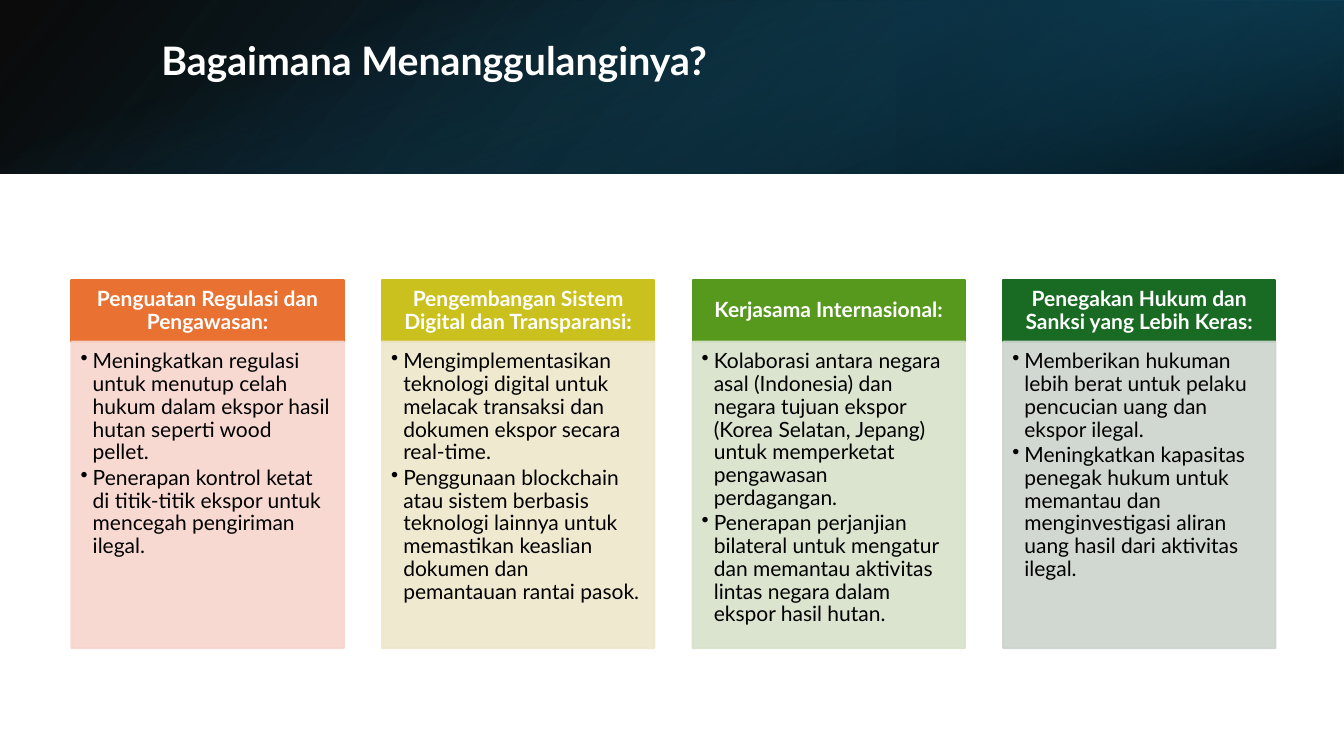
from lxml import etree
from pptx import Presentation
from pptx.dml.color import RGBColor
from pptx.enum import shapes, text
from pptx.oxml import ns
from pptx.util import Inches, Pt

WHITE = RGBColor(0xFF, 0xFF, 0xFF)
BLACK = RGBColor(0, 0, 0)
NAVY = RGBColor(0x0B, 0x30, 0x41)
DEEP_TEAL = RGBColor(0x10, 0x48, 0x62)
TEAL = RGBColor(0x15, 0x60, 0x82)
ORANGE, ORANGE_TINT = RGBColor(0xE9, 0x71, 0x32), RGBColor(0xF7, 0xD5, 0xCE)
OLIVE, OLIVE_TINT = RGBColor(0xCB, 0xC1, 0x1E), RGBColor(0xEE, 0xE7, 0xCB)
GREEN, GREEN_TINT = RGBColor(0x56, 0x99, 0x1D), RGBColor(0xD8, 0xE2, 0xCA)
FOREST, FOREST_TINT = RGBColor(0x19, 0x6B, 0x24), RGBColor(0xCC, 0xD4, 0xCD)
FONT = "Lato"

TITLE = "Bagaimana Menanggulanginya?"
MEASURES = [
    ("Penguatan Regulasi dan Pengawasan:", ORANGE, ORANGE_TINT, [
        "Meningkatkan regulasi untuk menutup celah hukum dalam ekspor hasil hutan seperti wood pellet.",
        "Penerapan kontrol ketat di titik-titik ekspor untuk mencegah pengiriman ilegal."]),
    ("Pengembangan Sistem Digital dan Transparansi:", OLIVE, OLIVE_TINT, [
        "Mengimplementasikan teknologi digital untuk melacak transaksi dan dokumen ekspor secara real-time.",
        "Penggunaan blockchain atau sistem berbasis teknologi lainnya untuk memastikan keaslian dokumen "
        "dan pemantauan rantai pasok."]),
    ("Kerjasama Internasional:", GREEN, GREEN_TINT, [
        "Kolaborasi antara negara asal (Indonesia) dan negara tujuan ekspor (Korea Selatan, Jepang) "
        "untuk memperketat pengawasan perdagangan.",
        "Penerapan perjanjian bilateral untuk mengatur dan memantau aktivitas lintas negara dalam "
        "ekspor hasil hutan."]),
    ("Penegakan Hukum dan Sanksi yang Lebih Keras:", FOREST, FOREST_TINT, [
        "Memberikan hukuman lebih berat untuk pelaku pencucian uang dan ekspor ilegal.",
        "Meningkatkan kapasitas penegak hukum untuk memantau dan menginvestigasi aliran uang hasil "
        "dari aktivitas ilegal."]),
]
BANDS = [
    ((0, 0, 13.33, 1.72), 0, True, 140, [(0, BLACK, 96), (100, DEEP_TEAL, 100)]),
    ((8.89, 0, 4.44, 1.72), 180, True, 320, [(19, NAVY, 68), (100, TEAL, 79)]),
    ((5.8, -5.8, 1.72, 13.33), 90, False, 340, [(23, TEAL, 0), (99, BLACK, 74)]),
]
LEFT, PITCH, WIDTH = 0.71, 3.08, 2.7
HEAD_TOP, HEAD_HEIGHT, BODY_HEIGHT = 2.78, 0.61, 3.04


def set_alpha(element, percent):
    """Give every RGB colour inside the element an opacity."""
    for colour in element.iter(ns.qn("a:srgbClr")):
        etree.SubElement(colour, ns.qn("a:alpha"), val=str(percent * 1000))


def add_rect(slide, box):
    """Add a rectangle without shadow."""
    rect = slide.shapes.add_shape(shapes.MSO_SHAPE.RECTANGLE, *map(Inches, box))
    rect.shadow.inherit = False
    return rect


def add_band(slide, box, rotation, flipped, angle, stops):
    """Add one translucent gradient layer of the title band."""
    band = add_rect(slide, box)
    band.rotation = rotation
    if flipped:
        band._element.spPr.find(ns.qn("a:xfrm")).set("flipH", "1")
    band.line.fill.background()
    band.fill.gradient()
    band.fill.gradient_angle = 360 - angle
    for stop, (position, colour, opacity) in zip(band.fill.gradient_stops, stops):
        stop.position = position / 100
        stop.color.rgb = colour
        set_alpha(stop._gs, opacity)


def write(frame, lines, size, colour, bold, align, anchor, margins):
    """Fill a text frame with evenly formatted paragraphs."""
    frame.word_wrap = True
    frame.auto_size = text.MSO_AUTO_SIZE.NONE
    frame.vertical_anchor = anchor
    (frame.margin_left, frame.margin_top,
     frame.margin_right, frame.margin_bottom) = map(Inches, margins)
    frame.text = "\n".join(lines)
    for paragraph in frame.paragraphs:
        paragraph.alignment = align
        paragraph.line_spacing = 0.9
        paragraph.space_before = Pt(0)
        font = paragraph.runs[0].font
        font.name, font.size, font.bold = FONT, Pt(size), bold
        font.color.rgb = colour


def add_panel(slide, box, colour):
    """Add a rectangle filled and outlined in one colour."""
    panel = add_rect(slide, box)
    panel.fill.solid()
    panel.fill.fore_color.rgb = colour
    panel.line.color.rgb = colour
    panel.line.width = Pt(1.5)
    return panel


def add_bullets(frame):
    """Turn the paragraphs into a hanging bullet list."""
    for paragraph in frame.paragraphs:
        paragraph.level = 1
        paragraph.space_after = Pt(2.25)
        properties = paragraph._p.get_or_add_pPr()
        properties.set("marL", str(Inches(0.12)))
        properties.set("indent", str(-Inches(0.12)))
        etree.SubElement(properties, ns.qn("a:buChar"), char="•")


def add_measure(slide, left, heading, colour, tint, points):
    """Add one column: a heading panel above its bullet panel."""
    head = add_panel(slide, (left, HEAD_TOP, WIDTH, HEAD_HEIGHT), colour)
    write(head.text_frame, [heading], 15, WHITE, True, text.PP_ALIGN.CENTER,
          text.MSO_ANCHOR.MIDDLE, (0.12, 0.07, 0.12, 0.07))
    body = add_panel(slide, (left, HEAD_TOP + HEAD_HEIGHT, WIDTH, BODY_HEIGHT), tint)
    set_alpha(body._element.spPr, 90)
    write(body.text_frame, points, 15, BLACK, False, text.PP_ALIGN.LEFT,
          text.MSO_ANCHOR.TOP, (0.09, 0.09, 0.12, 0.13))
    add_bullets(body.text_frame)


def main():
    """Build the slide and save it."""
    deck = Presentation()
    deck.slide_width, deck.slide_height = Inches(13.33), Inches(7.5)
    slide = deck.slides.add_slide(deck.slide_layouts[5])
    for band in BANDS:
        add_band(slide, *band)

    title = slide.shapes.title
    title.left, title.top, title.width, title.height = map(Inches, (1.5, 0.38, 10.98, 0.96))
    write(title.text_frame, [TITLE], 28, WHITE, True, text.PP_ALIGN.LEFT,
          text.MSO_ANCHOR.MIDDLE, (0.1, 0.05, 0.1, 0.53))
    slide.shapes._spTree.append(title._element)

    for column, measure in enumerate(MEASURES):
        add_measure(slide, LEFT + column * PITCH, *measure)
    deck.save("out.pptx")


if __name__ == "__main__":
    main()
